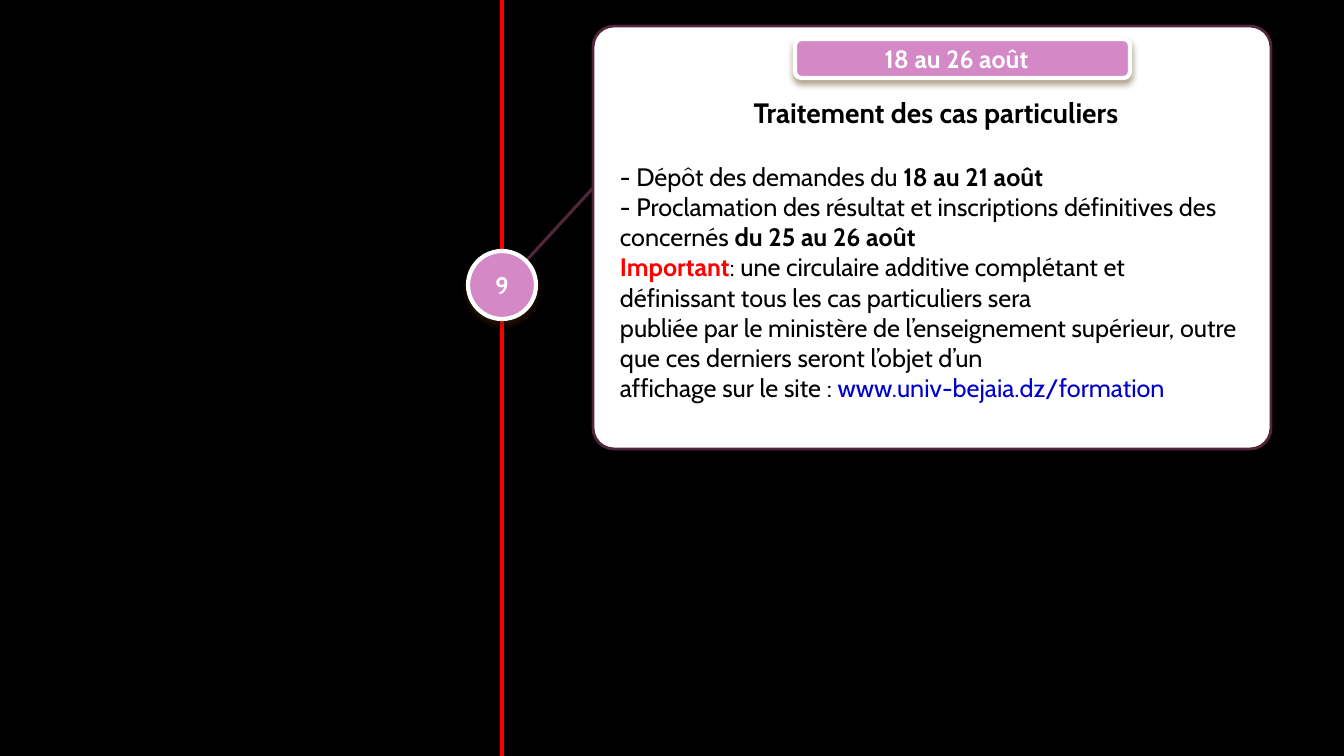
from dataclasses import dataclass

from lxml import etree
from pptx import Presentation
from pptx.dml.color import RGBColor
from pptx.enum.shapes import MSO_CONNECTOR, MSO_SHAPE
from pptx.enum.text import MSO_ANCHOR, PP_ALIGN
from pptx.oxml import parse_xml
from pptx.oxml.ns import nsdecls, qn
from pptx.util import Emu, Pt

STRAIGHT = MSO_CONNECTOR.STRAIGHT
ROUNDED, OVAL = MSO_SHAPE.ROUNDED_RECTANGLE, MSO_SHAPE.OVAL
MIDDLE, TOP = MSO_ANCHOR.MIDDLE, MSO_ANCHOR.TOP
CENTER, LEFT = PP_ALIGN.CENTER, PP_ALIGN.LEFT
EMU_PER_PX = 914400 / 100.8


@dataclass(frozen=True)
class Theme:
    font: str = "Cabin"
    black: str = "000000"
    white: str = "FFFFFF"
    red: str = "FF0000"
    blue: str = "0000CC"
    pink: str = "D488C5"
    plum: str = "51253A"
    badge_shadow: str = "594012"
    marker_shadow: str = "4F2511"
    title_size: float = 20
    body_size: float = 18
    badge_size: float = 17.9
    marker_size: float = 17.1


THEME = Theme()

# Each paragraph is a list of (text, bold, colour) runs.
BODY = [
    [("- Dépôt des demandes du ", False, THEME.black),
     ("18 au 21 août", True, THEME.black)],
    [("- Proclamation des résultat et inscriptions définitives des concernés ",
      False, THEME.black),
     ("du 25 au 26 août", True, THEME.black)],
    [("Important", True, THEME.red),
     (": une circulaire additive complétant et définissant tous les cas "
      "particuliers sera", False, THEME.black)],
    [("publiée par le ministère de l’enseignement supérieur, outre que ces "
      "derniers seront l’objet d’un", False, THEME.black)],
    [("affichage sur le site : ", False, THEME.black),
     ("www.univ-bejaia.dz/formation", False, THEME.blue)],
]


def px(length):
    return Emu(round(length * EMU_PER_PX))


def color(value):
    return RGBColor.from_string(value)


def add_line(slide, start, end, line_color, width):
    connector = slide.shapes.add_connector(
        STRAIGHT, *(px(value) for value in (*start, *end)))
    connector.line.color.rgb = color(line_color)
    connector.line.width = Pt(width)
    etree.SubElement(connector._element.spPr, qn("a:effectLst"))


def add_panel(slide, kind, box, fill, line_color, line_width):
    shape = slide.shapes.add_shape(kind, *(px(value) for value in box))
    shape.shadow.inherit = False
    shape.fill.solid()
    shape.fill.fore_color.rgb = color(fill)
    shape.line.color.rgb = color(line_color)
    shape.line.width = Pt(line_width)
    return shape


def add_shadow(shape, shadow_color):
    """Give the shape a soft shadow falling straight down."""
    effects = shape._element.spPr.find(qn("a:effectLst"))
    effects.append(parse_xml(
        f'<a:outerShdw {nsdecls("a")} blurRad="{Pt(4.5)}" dist="{Pt(3)}" '
        f'dir="5400000" rotWithShape="0"><a:srgbClr val="{shadow_color}">'
        '<a:alpha val="48000"/></a:srgbClr></a:outerShdw>'))


def write_text(shape, paragraphs, size, align, anchor, insets):
    """Fill the shape with runs; insets are left, top, right, bottom in px."""
    frame = shape.text_frame
    frame.word_wrap = True
    frame.vertical_anchor = anchor
    (frame.margin_left, frame.margin_top,
     frame.margin_right, frame.margin_bottom) = (px(inset) for inset in insets)
    for index, runs in enumerate(paragraphs):
        paragraph = frame.add_paragraph() if index else frame.paragraphs[0]
        paragraph.alignment = align
        paragraph.font.name = THEME.font
        paragraph.font.size = Pt(size)
        for text, bold, text_color in runs:
            run = paragraph.add_run()
            run.text = text
            run.font.bold = bold
            run.font.color.rgb = color(text_color)


def add_text(slide, box, paragraphs, size, align, insets):
    text_box = slide.shapes.add_textbox(*(px(value) for value in box))
    write_text(text_box, paragraphs, size, align, TOP, insets)


def add_label(slide, kind, box, text, size, shadow_color, insets):
    """Add a pink shape with a white outline, a shadow and centred text."""
    label = add_panel(slide, kind, box, THEME.pink, THEME.white, 3)
    add_shadow(label, shadow_color)
    write_text(label, [[(text, True, THEME.white)]], size, CENTER, MIDDLE, insets)


def main():
    presentation = Presentation()
    presentation.slide_width, presentation.slide_height = px(1344), px(756)
    slide = presentation.slides.add_slide(presentation.slide_layouts[6])
    slide.background.fill.solid()
    slide.background.fill.fore_color.rgb = color(THEME.black)

    add_line(slide, (502, 251), (502, 0), THEME.red, 3)
    add_line(slide, (526, 261), (593, 188), THEME.plum, 2.25)
    card = add_panel(slide, ROUNDED, (593, 26, 678, 423),
                     THEME.white, THEME.plum, 2)
    card.adjustments[0] = 0.05
    add_line(slide, (502, 319), (502, 756), THEME.red, 3)

    add_label(slide, ROUNDED, (795, 39, 335, 39), "18 au 26 août",
              THEME.badge_size, THEME.badge_shadow, (7, 4, 19, 4))
    add_label(slide, OVAL, (468, 251, 68, 68), "9",
              THEME.marker_size, THEME.marker_shadow, (10, 5, 10, 5))
    add_text(slide, (593, 90, 680, 44),
             [[("Traitement des cas particuliers", True, THEME.black)]],
             THEME.title_size, CENTER, (16, 5, 10, 5))
    add_text(slide, (610, 156, 645, 254), BODY,
             THEME.body_size, LEFT, (10, 5, 10, 5))
    presentation.save("out.pptx")


if __name__ == "__main__":
    main()
